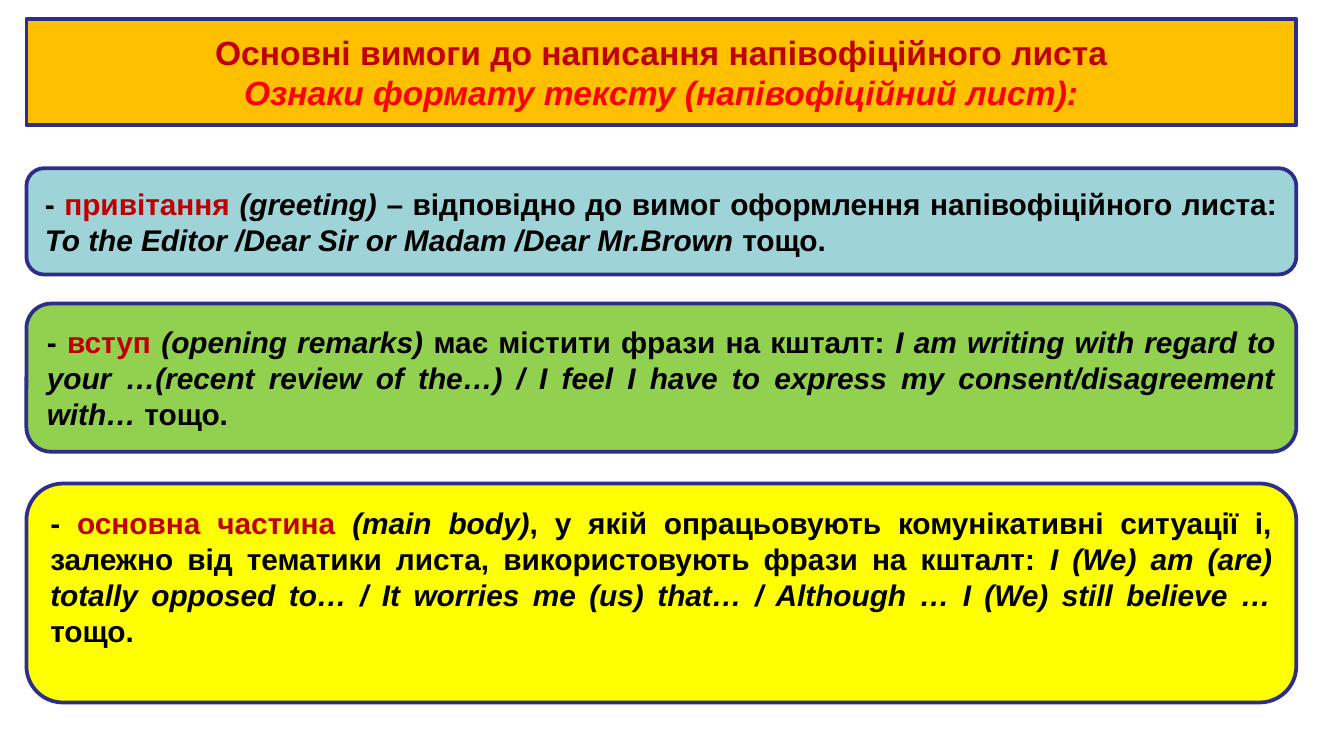
from dataclasses import dataclass

from pptx import Presentation
from pptx.dml.color import RGBColor
from pptx.enum.shapes import MSO_SHAPE
from pptx.enum.text import MSO_ANCHOR, MSO_AUTO_SIZE, PP_ALIGN
from pptx.util import Cm, Pt

COLORS = {
    "border": "2D2D8A", "banner": "FFC000", "heading": "C00000",
    "subheading": "FF0000", "text": "000000",
    "greeting": "9ED3D7", "opening": "92D050", "main": "FFFF00",
}
LEFT, WIDTH = Cm(0.5), Cm(24)


@dataclass
class Run:
    text: str
    color: str = "text"
    italic: bool = False


@dataclass
class Card:
    top: float
    height: float
    fill: str
    runs: list[Run]
    bottom_inset: float = 0.13


def rgb(name: str) -> RGBColor:
    return RGBColor.from_string(COLORS[name])


def style_box(sp, top: float, height: float, fill: str) -> None:
    """Place a box in the common column, then set its fill, border and text frame."""
    sp.left, sp.top, sp.width, sp.height = LEFT, Cm(top), WIDTH, Cm(height)
    sp.fill.solid()
    sp.fill.fore_color.rgb = rgb(fill)
    sp.line.color.rgb = rgb("border")
    sp.line.width = Pt(2)
    tf = sp.text_frame
    tf.word_wrap = True
    tf.auto_size = MSO_AUTO_SIZE.NONE
    tf.vertical_anchor = MSO_ANCHOR.MIDDLE


def write(p, runs: list[Run], size: int, align: PP_ALIGN) -> None:
    p.alignment = align
    p.font.name, p.font.size, p.font.bold = "Arial", Pt(size), True
    for run in runs:
        r = p.add_run()
        r.text = run.text
        r.font.italic = run.italic
        r.font.color.rgb = rgb(run.color)


def add_card(s, card: Card) -> None:
    sp = s.shapes.add_shape(MSO_SHAPE.ROUNDED_RECTANGLE, LEFT, Cm(card.top),
                            WIDTH, Cm(card.height))
    sp.shadow.inherit = False
    style_box(sp, card.top, card.height, card.fill)
    sp.text_frame.margin_bottom = Cm(card.bottom_inset)
    write(sp.text_frame.paragraphs[0], [Run("- "), *card.runs], 16, PP_ALIGN.JUSTIFY)


TITLE = [
    Run("Основні вимоги до написання напівофіційного листа", "heading"),
    Run("Ознаки формату тексту (напівофіційний лист):", "subheading", True),
]
CARDS = [
    Card(3.18, 2.01, "greeting", [
        Run("привітання ", "heading"),
        Run("(greeting) ", italic=True),
        Run("– відповідно до вимог оформлення напівофіційного листа: "),
        Run("To the Editor /Dear Sir or Madam /Dear Mr.Brown ", italic=True),
        Run("тощо."),
    ]),
    Card(5.74, 2.8, "opening", [
        Run("вступ ", "heading"),
        Run("(opening remarks) ", italic=True),
        Run("має містити фрази на кшталт: "),
        Run("I am writing with regard to your …(recent review of the…) / "
            "I feel I have to express my consent/disagreement with…", italic=True),
        Run(" тощо."),
    ]),
    Card(9.14, 4.14, "main", [
        Run("основна частина ", "heading"),
        Run("(main body)", italic=True),
        Run(", у якій опрацьовують комунікативні ситуації і, залежно від "
            "тематики листа, використовують фрази на кшталт: "),
        Run("I (We) am (are) totally opposed to… / It worries me (us) that… / "
            "Although … I (We) still believe … ", italic=True),
        Run("тощо."),
    ], bottom_inset=0.75),
]


def main() -> None:
    prs = Presentation()
    prs.slide_width, prs.slide_height = Cm(25.4), Cm(14.29)
    s = prs.slides.add_slide(prs.slide_layouts[5])

    # Title banner
    title = s.shapes.title
    style_box(title, 0.36, 2.01, "banner")
    tf = title.text_frame
    for i, run in enumerate(TITLE):
        p = tf.add_paragraph() if i else tf.paragraphs[0]
        write(p, [run], 18, PP_ALIGN.CENTER)

    # Parts of the letter
    for card in CARDS:
        add_card(s, card)

    prs.save("out.pptx")


if __name__ == "__main__":
    main()
